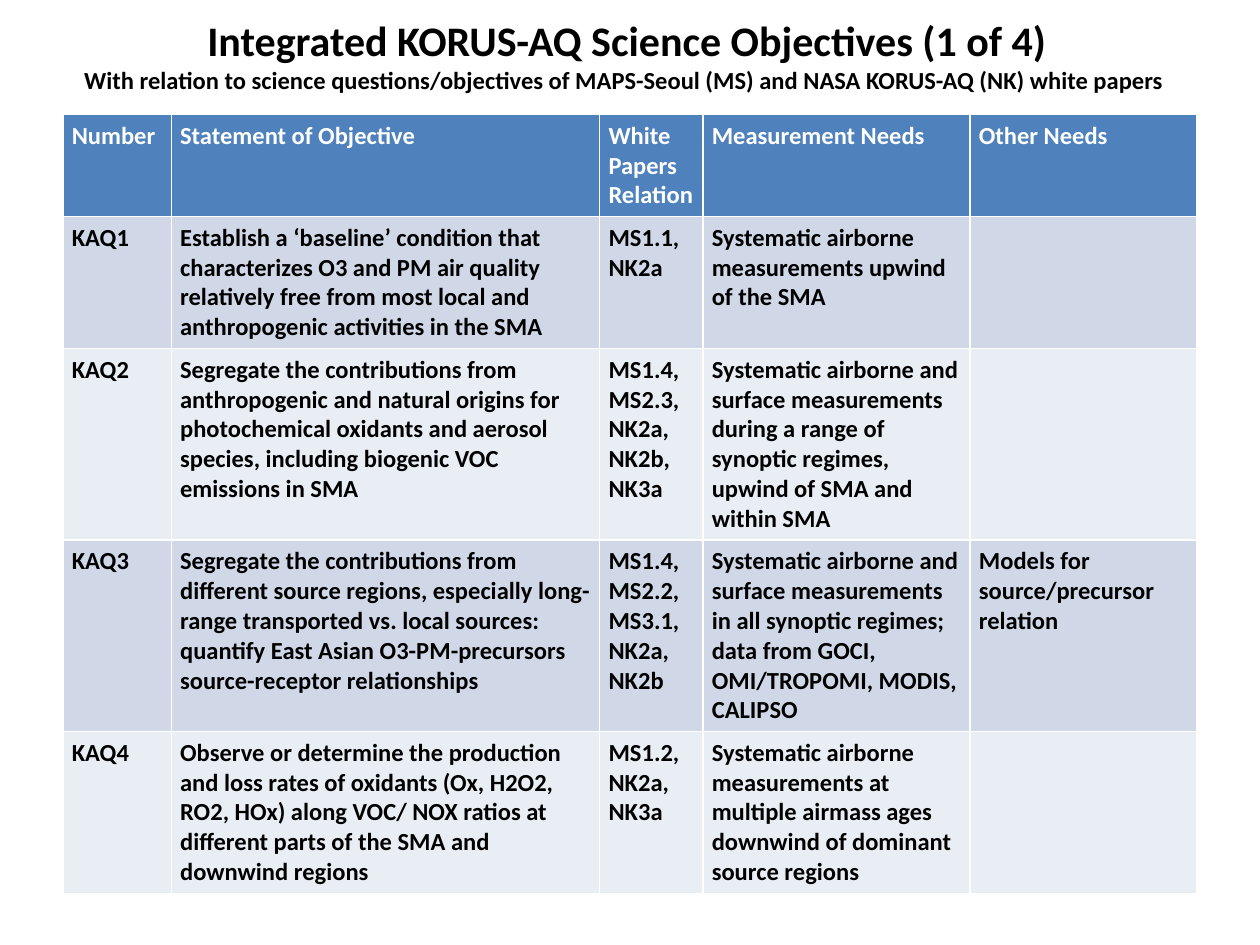
from pptx import Presentation
from pptx.dml.color import RGBColor
from pptx.enum.text import MSO_ANCHOR, PP_ALIGN
from pptx.util import Inches, Pt

BLACK = RGBColor(0x00, 0x00, 0x00)
WHITE = RGBColor(0xFF, 0xFF, 0xFF)
BLUE = RGBColor(0x4F, 0x81, 0xBD)
BANDS = [RGBColor(0xD0, 0xD8, 0xE8), RGBColor(0xE9, 0xED, 0xF4)]

ROWS = [
    ["Number", "Statement of Objective", "White Papers Relation",
     "Measurement Needs", "Other Needs"],
    ["KAQ1",
     "Establish a ‘baseline’ condition that characterizes O3 and PM air quality "
     "relatively free from most local and anthropogenic activities in the SMA",
     "MS1.1, NK2a",
     "Systematic airborne measurements upwind of the SMA",
     ""],
    ["KAQ2",
     "Segregate the contributions from anthropogenic and natural origins for "
     "photochemical oxidants and aerosol species, including biogenic VOC "
     "emissions in SMA",
     "MS1.4, MS2.3, NK2a, NK2b, NK3a",
     "Systematic airborne and surface measurements during a range of synoptic "
     "regimes, upwind of SMA and within SMA",
     ""],
    ["KAQ3",
     "Segregate the contributions from different source regions, especially "
     "long-range transported vs. local sources: quantify East Asian "
     "O3-PM-precursors source-receptor relationships",
     "MS1.4, MS2.2, MS3.1, NK2a, NK2b",
     "Systematic airborne and surface measurements in all synoptic regimes; "
     "data from GOCI, OMI/TROPOMI, MODIS, CALIPSO",
     "Models for source/precursor relation"],
    ["KAQ4",
     "Observe or determine the production and loss rates of oxidants (Ox, H2O2, "
     "RO2, HOx) along VOC/ NOX ratios at different parts of the SMA and "
     "downwind regions",
     "MS1.2, NK2a, NK3a",
     "Systematic airborne measurements at multiple airmass ages downwind of "
     "dominant source regions",
     ""],
]
WIDTHS = [0.86, 3.4, 0.82, 2.12, 1.8]
HEIGHTS = [0.8, 1.04, 1.5, 1.5, 1.26]


def style(run, size, color):
    run.font.name = "Calibri"
    run.font.size = Pt(size)
    run.font.bold = True
    run.font.color.rgb = color


prs = Presentation()
prs.slide_width, prs.slide_height = Inches(10), Inches(7.5)
slide = prs.slides.add_slide(prs.slide_layouts[5])

# Title and subtitle share one paragraph, parted by a line break
title = slide.shapes.title
title.left, title.top = Inches(0.12), Inches(0.13)
title.width, title.height = Inches(9.71), Inches(0.61)
title.text_frame.vertical_anchor = MSO_ANCHOR.MIDDLE
para = title.text_frame.paragraphs[0]
para.text = ("Integrated KORUS-AQ Science Objectives (1 of 4)\v"
             "With relation to science questions/objectives of MAPS-Seoul (MS) "
             "and NASA KORUS-AQ (NK) white papers ")
para.alignment = PP_ALIGN.CENTER
for run, size in zip(para.runs, [24, 14]):
    style(run, size, BLACK)

# The default table style supplies the white rules between cells
table = slide.shapes.add_table(len(ROWS), len(WIDTHS), Inches(0.5), Inches(0.91),
                               Inches(9), Inches(6.1)).table
for col, width in zip(table.columns, WIDTHS):
    col.width = Inches(width)
for row, height in zip(table.rows, HEIGHTS):
    row.height = Inches(height)

for r, texts in enumerate(ROWS):
    fill = BANDS[(r - 1) % 2] if r else BLUE
    color = BLACK if r else WHITE
    for c, text in enumerate(texts):
        cell = table.cell(r, c)
        cell.fill.solid()
        cell.fill.fore_color.rgb = fill
        cell.margin_left = cell.margin_right = Inches(0.07)
        cell.margin_top = cell.margin_bottom = Inches(0.05)
        if text:
            cell.text_frame.text = text
            style(cell.text_frame.paragraphs[0].runs[0], 14, color)

prs.save("out.pptx")
